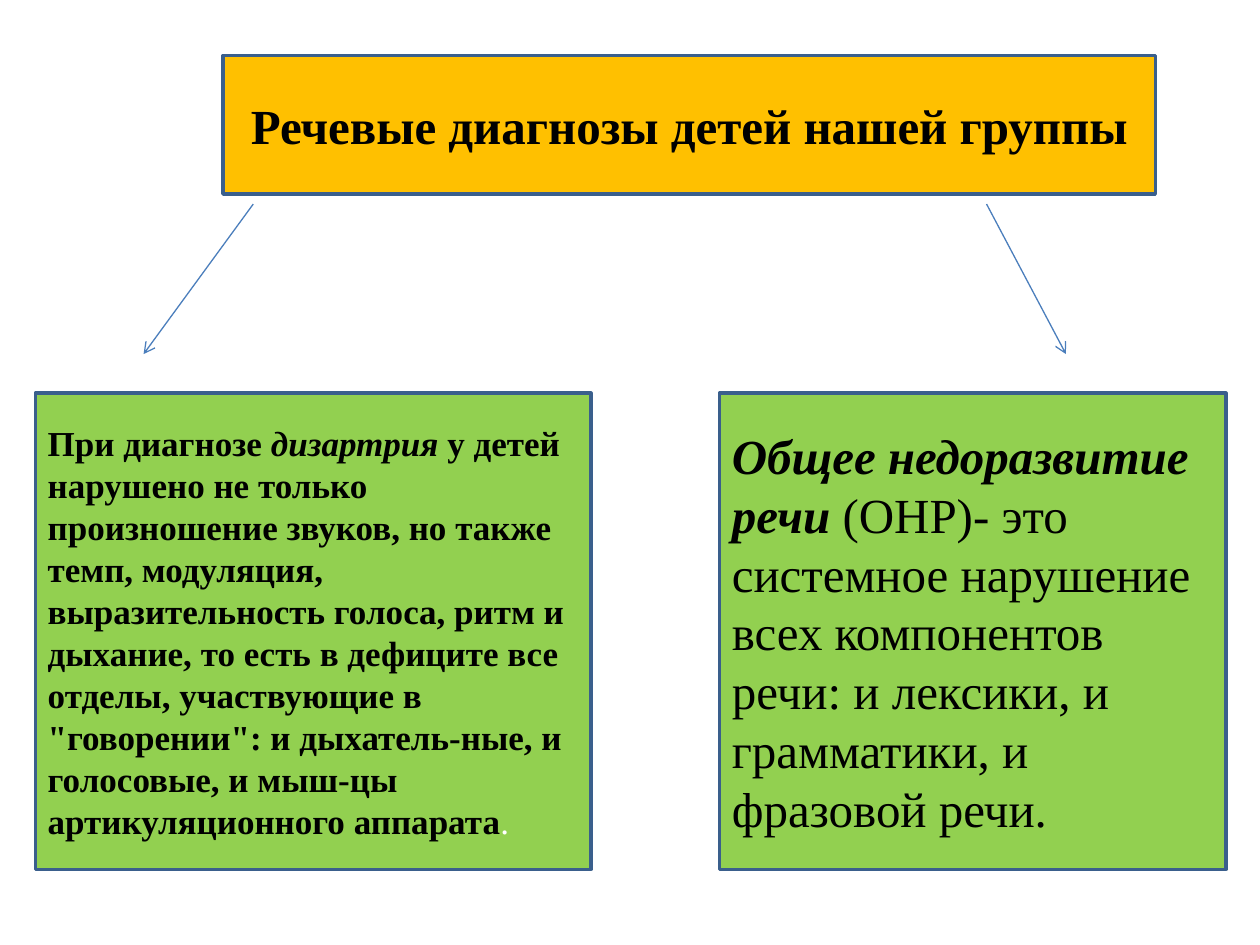
from lxml.etree import SubElement
from pptx import Presentation
from pptx.dml.color import RGBColor
from pptx.enum.shapes import MSO_CONNECTOR, MSO_SHAPE
from pptx.enum.text import MSO_ANCHOR, PP_ALIGN
from pptx.oxml.ns import qn
from pptx.util import Inches, Pt

WIDTH, HEIGHT = Inches(10), Inches(7.5)
COLUMNS, ROWS = 100, 75  # grid cells of a tenth of an inch
FONT = "Times New Roman"
AMBER = RGBColor(0xFF, 0xC0, 0x00)
GREEN = RGBColor(0x92, 0xD0, 0x50)
BORDER = RGBColor(0x3A, 0x5F, 0x8C)
ARROW = RGBColor(0x4B, 0x7E, 0xBC)
BLACK = RGBColor(0, 0, 0)
WHITE = RGBColor(0xFF, 0xFF, 0xFF)


def across(columns):
    return round(WIDTH * columns / COLUMNS)


def down(rows):
    return round(HEIGHT * rows / ROWS)


def add_span(para, text, size, bold=False, italic=False, color=BLACK):
    span = para.add_run()
    span.text = text
    font = span.font
    font.name, font.size = FONT, Pt(size)
    font.bold, font.italic = bold, italic
    font.color.rgb = color


def add_panel(page, area, fill, align=PP_ALIGN.LEFT):
    """Draw a bordered panel and return its empty paragraph."""
    left, top, width, height = area
    box = page.shapes.add_shape(MSO_SHAPE.RECTANGLE, across(left), down(top),
                                across(width), down(height))
    box.shadow.inherit = False
    box.fill.solid()
    box.fill.fore_color.rgb = fill
    box.line.color.rgb = BORDER
    box.line.width = Pt(2)
    frame = box.text_frame
    frame.word_wrap = True
    frame.vertical_anchor = MSO_ANCHOR.MIDDLE
    para = frame.paragraphs[0]
    para.alignment = align
    return para


def add_arrow(page, start, end):
    arrow = page.shapes.add_connector(
        MSO_CONNECTOR.STRAIGHT, across(start[0]), down(start[1]),
        across(end[0]), down(end[1]))
    arrow.line.color.rgb = ARROW
    arrow.line.width = Pt(0.75)
    SubElement(arrow.line._get_or_add_ln(), qn("a:tailEnd"), type="arrow")
    SubElement(arrow._element.spPr, qn("a:effectLst"))


def add_title(page, area):
    para = add_panel(page, area, AMBER, PP_ALIGN.CENTER)
    add_span(para, "Речевые диагнозы детей нашей группы", 28, bold=True)


def add_dysarthria(page, area):
    para = add_panel(page, area, GREEN)
    add_span(para, "При диагнозе ", 20, bold=True)
    add_span(para, "дизартрия", 20, bold=True, italic=True)
    add_span(para, " у детей нарушено не только произношение звуков, но также "
             "темп, модуляция, выразительность голоса, ритм и дыхание, то есть "
             "в дефиците все отделы, участвующие в \"говорении\": и "
             "дыхатель-ные, и голосовые, и мыш-цы артикуляционного аппарата",
             20, bold=True)
    add_span(para, ".", 20, color=WHITE)


def add_underdevelopment(page, area):
    para = add_panel(page, area, GREEN)
    add_span(para, "Общее недоразвитие речи ", 28, bold=True, italic=True)
    add_span(para, "(ОНР)- это системное нарушение всех компонентов речи: "
             "и лексики, и грамматики, и фразовой речи.", 28)


def main():
    deck = Presentation()
    deck.slide_width, deck.slide_height = WIDTH, HEIGHT
    page = deck.slides.add_slide(deck.slide_layouts[6])

    arrow_top, arrow_bottom = 16.2, 28.1
    panel_top, panel_height = 31.2, 37.8
    add_title(page, (17.7, 4.4, 74, 11))
    add_arrow(page, (20.1, arrow_top), (11.4, arrow_bottom))
    add_dysarthria(page, (2.8, panel_top, 44.1, panel_height))
    add_arrow(page, (78.3, arrow_top), (84.6, arrow_bottom))
    add_underdevelopment(page, (57.1, panel_top, 40.2, panel_height))
    deck.save("out.pptx")


if __name__ == "__main__":
    main()
